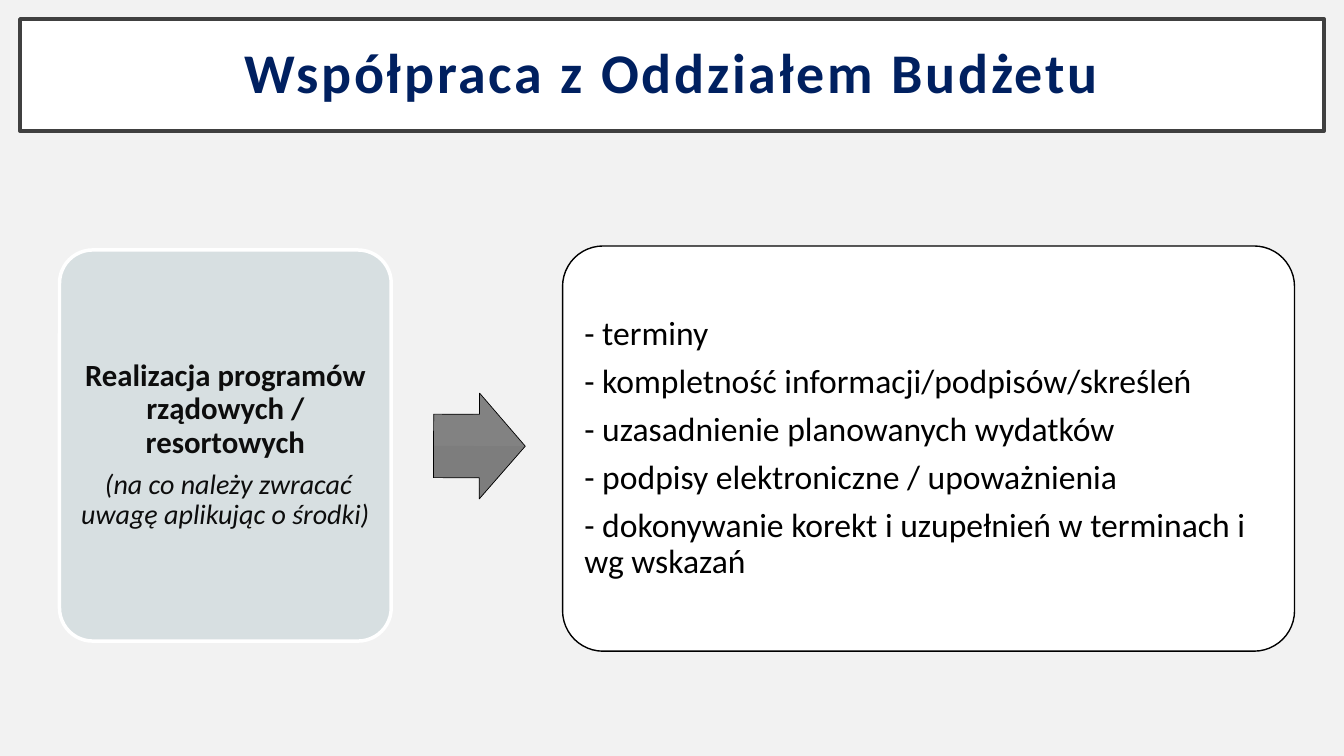
from pptx import Presentation
from pptx import util as u
from pptx.dml.color import RGBColor
from pptx.enum import shapes, text


def rgb(value):
    return RGBColor.from_string(value)


class SlideBuilder:
    font = "Calibri"
    line_spacing = 0.9

    def __init__(self, prs, background):
        self.s = prs.slides.add_slide(prs.slide_layouts[6])
        fill = self.s.background.fill
        fill.solid()
        fill.fore_color.rgb = rgb(background)

    def shape(self, kind, box, fill, line, width, adjustments=()):
        sp = self.s.shapes.add_shape(kind, *map(u.Inches, box))
        sp.shadow.inherit = False
        for i, value in enumerate(adjustments):
            sp.adjustments[i] = value
        sp.fill.solid()
        sp.fill.fore_color.rgb = rgb(fill)
        sp.line.color.rgb = rgb(line)
        sp.line.width = u.Pt(width)
        return sp

    def frame(self, sp, inset_x, inset_y):
        tf = sp.text_frame
        tf.word_wrap = True
        tf.vertical_anchor = text.MSO_ANCHOR.MIDDLE
        tf.margin_left = tf.margin_right = u.Inches(inset_x)
        tf.margin_top = tf.margin_bottom = u.Inches(inset_y)
        return tf

    def paragraph(self, tf, words, size, color, align, bold=False,
                  italic=False, after=0, spacing=0):
        p = tf.paragraphs[0]
        if p.runs:
            p = tf.add_paragraph()
        p.alignment = align
        p.line_spacing = self.line_spacing
        p.space_after = u.Pt(after)
        r = p.add_run()
        r.text = words
        r.font.name = self.font
        r.font.size = u.Pt(size)
        r.font.bold = bold
        r.font.italic = italic
        r.font.color.rgb = rgb(color)
        if spacing:
            r.font._element.set("spc", str(spacing * 100))

    def arrow(self, box, colors, line, width, rotation):
        sp = self.shape(shapes.MSO_SHAPE.RIGHT_ARROW, box, colors[0], line,
                        width, (0.6, 0.5))
        sp.rotation = rotation
        sp.fill.gradient()
        sp.fill.gradient_angle = 270
        for stop, color in zip(sp.fill.gradient_stops, colors):
            stop.color.rgb = rgb(color)


def main():
    prs = Presentation()
    prs.slide_width = u.Inches(13.33)
    prs.slide_height = u.Inches(7.5)
    slide = SlideBuilder(prs, "F2F2F2")
    center, left = text.PP_ALIGN.CENTER, text.PP_ALIGN.LEFT
    rounded = shapes.MSO_SHAPE.ROUNDED_RECTANGLE

    title = slide.shape(shapes.MSO_SHAPE.RECTANGLE, (0.2, 0.19, 12.93, 1.11),
                        "FFFFFF", "404040", 3)
    slide.paragraph(slide.frame(title, 0.3, 0.2),
                    "Współpraca z Oddziałem Budżetu", 40, "002060", center,
                    bold=True, spacing=2)

    programs = slide.shape(rounded, (0.59, 2.48, 3.29, 3.88),
                           "D7DFE1", "FFFFFF", 2.5, (0.1,))
    tf = slide.frame(programs, 0.09, 0.09)
    slide.paragraph(tf, "Realizacja programów rządowych / resortowych", 22,
                    "0D0D0D", center, bold=True, after=7.7)
    slide.paragraph(tf, " (na co należy zwracać uwagę aplikując o środki)", 20,
                    "0D0D0D", center, italic=True, after=7)

    slide.arrow((4.3, 3.9, 0.91, 1.05), ("828282", "7D7D7D"), "000000", 0.5, 0.2)

    requirements = slide.shape(rounded, (5.58, 2.44, 7.26, 4.02),
                               "FFFFFF", "000000", 1, (0.1,))
    tf = slide.frame(requirements, 0.1, 0.1)
    for words in (
        "- terminy",
        "- kompletność informacji/podpisów/skreśleń",
        "- uzasadnienie planowanych wydatków",
        "- podpisy elektroniczne / upoważnienia",
        "- dokonywanie korekt i uzupełnień w terminach i wg wskazań",
    ):
        slide.paragraph(tf, words, 24, "000000", left, after=8.4)

    prs.save("out.pptx")


if __name__ == "__main__":
    main()
